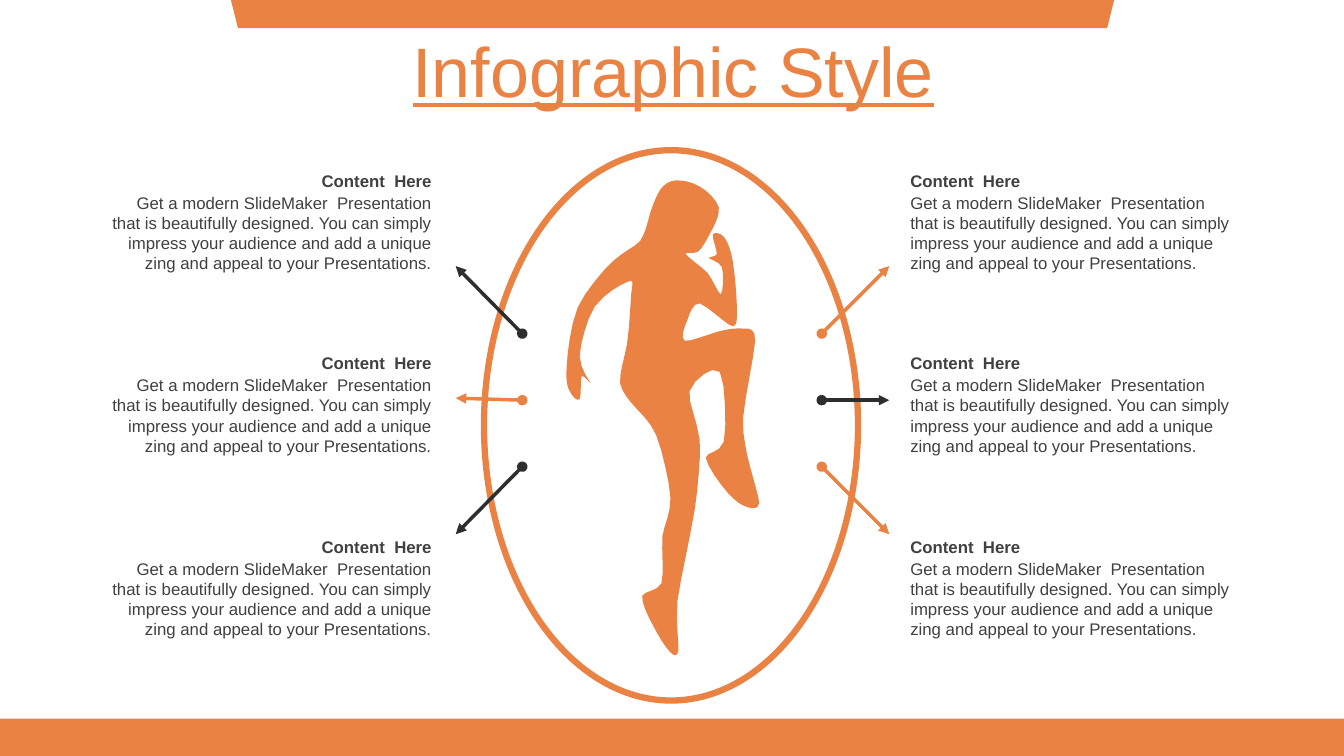
from dataclasses import dataclass

from lxml import etree
from pptx import Presentation
from pptx.dml.color import RGBColor
from pptx.enum.shapes import MSO_CONNECTOR, MSO_SHAPE
from pptx.enum.text import MSO_ANCHOR, MSO_AUTO_SIZE, PP_ALIGN
from pptx.oxml.ns import qn
from pptx.util import Inches, Pt

LEFT, CENTER, RIGHT = PP_ALIGN.LEFT, PP_ALIGN.CENTER, PP_ALIGN.RIGHT
TOP, MIDDLE = MSO_ANCHOR.TOP, MSO_ANCHOR.MIDDLE


@dataclass(frozen=True)
class Theme:
    font: str = "Arial"
    orange: RGBColor = RGBColor(0xEA, 0x82, 0x44)
    dark: RGBColor = RGBColor(0x2E, 0x2E, 0x2E)
    text: RGBColor = RGBColor(0x40, 0x40, 0x40)
    title_size: int = 50
    text_size: int = 12
    ring_width: float = 4.5
    arrow_width: float = 2.5


THEME = Theme()

# Content
TITLE = "Infographic Style"
HEADING = "Content  Here"
BODY = ("Get a modern SlideMaker  Presentation that is beautifully designed. "
        "You can simply impress your audience and add a unique zing and appeal "
        "to your Presentations.")
ROW_TOPS = (1.64, 3.45, 5.27)
BLOCK_WIDTH, HEADING_HEIGHT, BODY_HEIGHT, BODY_OFFSET = 3.39, 0.3, 0.91, 0.22

# Block left, alignment, arrow start x, arrow tip x, arrow tip ys, arrow colours
COLUMNS = (
    (8.93, LEFT, 8.15, 8.82, (2.64, 3.97, 5.3),
     (THEME.orange, THEME.dark, THEME.orange)),
    (0.99, RIGHT, 5.18, 4.52, (2.64, 3.95, 5.3),
     (THEME.dark, THEME.orange, THEME.dark)),
)
ARROW_TOP, ARROW_STEP = 3.31, 0.66

# Key points of the runner's outline, clockwise from the top of the head
RUNNER = (
    # Head and raised arm
    (6.7, 1.79), (6.94, 1.85), (7.13, 2.06), (7.04, 2.32), (6.92, 2.5),
    (6.8, 2.52), (7.02, 2.71), (7.15, 2.92), (7.16, 2.65), (7.03, 2.56),
    (7.11, 2.52), (7.07, 2.33), (7.18, 2.35), (7.27, 2.6), (7.31, 3.14),
    (7.23, 3.22), (6.94, 3.01), (6.82, 3.17), (6.79, 3.38),
    # Raised leg
    (7.12, 3.29), (7.38, 3.26), (7.49, 3.39), (7.37, 4.15), (7.44, 4.63),
    (7.53, 4.99), (7.41, 5.03), (7.22, 4.89), (7, 4.54), (7.18, 4.38),
    (7.14, 3.69), (6.84, 3.88),
    # Standing leg
    (6.94, 4.36), (6.89, 5.06), (6.72, 5.96), (6.73, 6.45), (6.64, 6.46),
    (6.48, 6.21), (6.37, 5.91), (6.56, 5.79), (6.57, 5.32), (6.65, 4.94),
    (6.51, 4.32), (6.31, 4.05), (6.15, 3.8), (6.22, 3.41), (6.26, 2.92),
    (6.24, 2.79),
    # Lowered arm and hair
    (5.9, 3.04), (5.75, 3.54), (5.86, 3.8), (5.77, 3.73), (5.75, 3.96),
    (5.65, 3.88), (5.62, 3.64), (5.73, 3.05), (6.08, 2.59), (6.35, 2.39),
    (6.45, 2.11), (6.55, 1.88),
)


def inch_box(*lengths):
    return [Inches(length) for length in lengths]


def smooth_outline(points):
    """Put a curved midpoint between every two neighbours of a closed outline."""
    count = len(points)
    result = []
    for index, point in enumerate(points):
        nearest = point, points[(index + 1) % count]
        outer = points[index - 1], points[(index + 2) % count]
        middle = tuple(
            (9 * (nearest[0][axis] + nearest[1][axis])
             - outer[0][axis] - outer[1][axis]) / 16 for axis in (0, 1))
        result += [point, middle]
    return result


def paint(shape, fill=None, line=None):
    shape.shadow.inherit = False
    if fill is None:
        shape.fill.background()
    else:
        shape.fill.solid()
        shape.fill.fore_color.rgb = fill
    if line is None:
        shape.line.fill.background()
    else:
        shape.line.color.rgb = line
        shape.line.width = Pt(THEME.ring_width)


def set_text(box, text, align, size, color, anchor, fit):
    frame = box.text_frame
    frame.text = text
    frame.word_wrap = True
    frame.auto_size = fit
    frame.vertical_anchor = anchor
    para = frame.paragraphs[0]
    para.alignment = align
    span = para.runs[0]
    span.font.name = THEME.font
    span.font.size = Pt(size)
    span.font.color.rgb = color
    return para, span


def add_arrow(page, start, tip, color):
    arrow = page.shapes.add_connector(
        MSO_CONNECTOR.STRAIGHT, *inch_box(*start, *tip))
    arrow.line.color.rgb = color
    arrow.line.width = Pt(THEME.arrow_width)
    outline = arrow.line._get_or_add_ln()
    for tag, kind in (("a:headEnd", "oval"), ("a:tailEnd", "triangle")):
        etree.SubElement(outline, qn(tag)).set("type", kind)
    etree.SubElement(arrow._element.spPr, qn("a:effectLst"))


def add_block(page, left, top, align):
    block = page.shapes.add_group_shape()
    parts = ((HEADING, top, HEADING_HEIGHT, MIDDLE, True),
             (BODY, top + BODY_OFFSET, BODY_HEIGHT, TOP, False))
    for text, part_top, height, anchor, bold in parts:
        box = block.shapes.add_textbox(
            *inch_box(left, part_top, BLOCK_WIDTH, height))
        para, span = set_text(box, text, align, THEME.text_size, THEME.text,
                              anchor, MSO_AUTO_SIZE.SHAPE_TO_FIT_TEXT)
        span.font.bold = bold


def add_runner(page):
    outline = smooth_outline(smooth_outline(RUNNER))
    points = [inch_box(*point) for point in outline]
    builder = page.shapes.build_freeform(*points[0])
    builder.add_line_segments(points[1:], close=True)
    paint(builder.convert_to_shape(), fill=THEME.orange)


def main():
    deck = Presentation()
    deck.slide_width, deck.slide_height = inch_box(13.33, 7.5)
    page = deck.slides.add_slide(deck.slide_layouts[5])

    # Title
    title = page.shapes.title
    title.left, title.top, title.width, title.height = inch_box(
        0.35, 0.37, 12.66, 0.79)
    para, span = set_text(title, TITLE, CENTER, THEME.title_size, THEME.orange,
                          MIDDLE, MSO_AUTO_SIZE.NONE)
    para.line_spacing = 0.8
    para.space_before = Pt(10)
    span.font.underline = True

    # Bands and ring
    footer = page.shapes.add_shape(
        MSO_SHAPE.RECTANGLE, *inch_box(0, 7.13, 13.33, 0.37))
    paint(footer, fill=THEME.orange)
    header = page.shapes.add_shape(
        MSO_SHAPE.TRAPEZOID, *inch_box(2.29, 0, 8.76, 0.28))
    header.rotation = 180
    paint(header, fill=THEME.orange)
    ring = page.shapes.add_shape(
        MSO_SHAPE.OVAL, *inch_box(4.8, 1.49, 3.71, 5.46))
    paint(ring, line=THEME.orange)

    # Arrows and text blocks
    for left, align, start_x, tip_x, tip_ys, colors in COLUMNS:
        for row, (top, tip_y, color) in enumerate(zip(ROW_TOPS, tip_ys, colors)):
            start = (start_x, ARROW_TOP + row * ARROW_STEP)
            add_arrow(page, start, (tip_x, tip_y), color)
            add_block(page, left, top, align)

    # Runner
    add_runner(page)
    deck.save("out.pptx")


if __name__ == "__main__":
    main()
